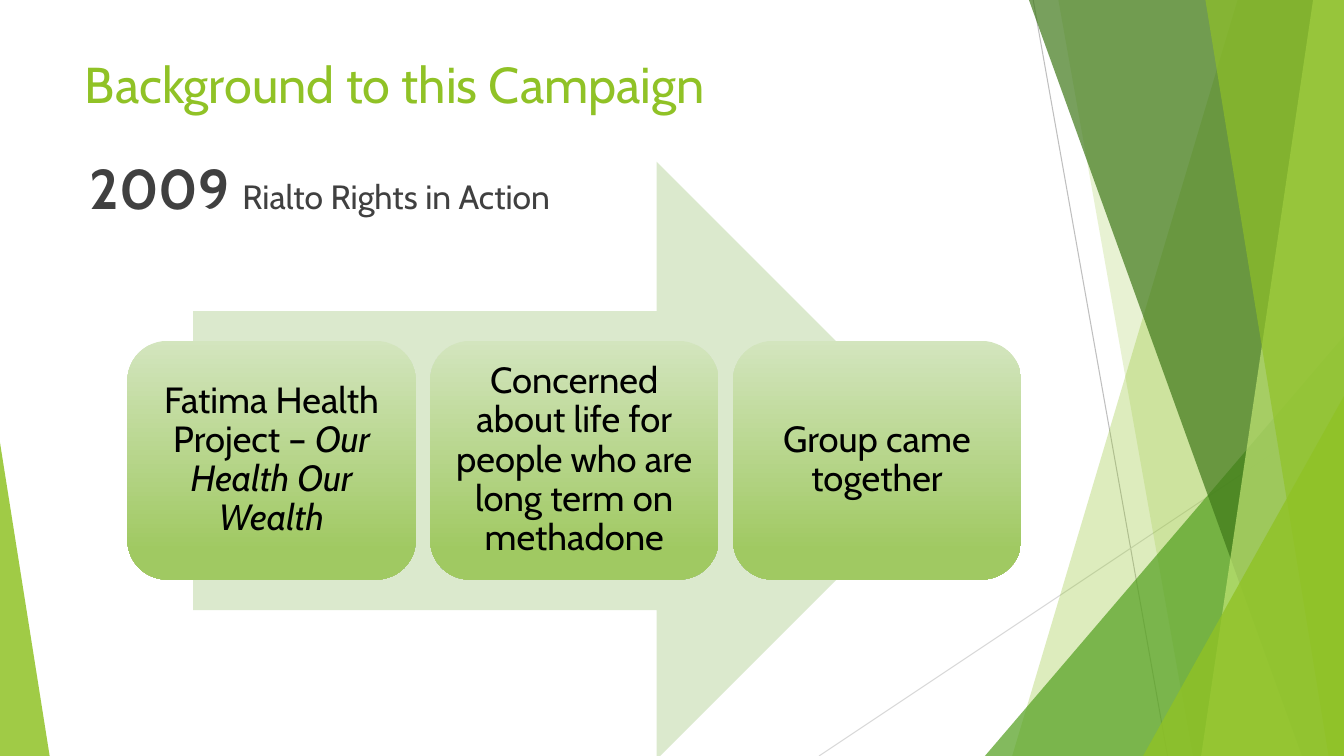
"""Build the campaign background slide."""
import pptx
import pptx.dml.color
import pptx.enum.shapes
import pptx.enum.text
import pptx.oxml
import pptx.oxml.ns
import pptx.util

Pt = pptx.util.Pt
RGBColor = pptx.dml.color.RGBColor
SHAPE = pptx.enum.shapes.MSO_SHAPE
ANCHOR = pptx.enum.text.MSO_ANCHOR
ALIGN = pptx.enum.text.PP_ALIGN
qn = pptx.oxml.ns.qn

WIDE, HIGH = 960, 540
FONT = "Cabin"
LIME = RGBColor(0x90, 0xC2, 0x26)
LEAF = RGBColor(0x54, 0xA0, 0x21)
MOSS = RGBColor(0x3F, 0x78, 0x19)
PALE = RGBColor(0xC0, 0xE4, 0x74)
MIST = RGBColor(0xDB, 0xE9, 0xCD)
CARD_TOP = RGBColor(0xD3, 0xE5, 0xBE)
CARD_END = RGBColor(0xA0, 0xC9, 0x62)
SILVER = RGBColor(0xBF, 0xBF, 0xBF)
LIGHT = RGBColor(0xD9, 0xD9, 0xD9)
DARK = RGBColor(0x40, 0x40, 0x40)
BLACK = RGBColor(0, 0, 0)

CARDS = [
    [("Fatima Health Project – ", False), ("Our Health Our Wealth", True)],
    [("Concerned about life for people who are long term on methadone", False)],
    [("Group came together", False)],
]


def write(frame, text, size=26, color=BLACK, bold=False, italic=False):
    run = frame.paragraphs[0].add_run()
    run.text = text
    font = run.font
    font.name, font.size = FONT, Pt(size)
    font.bold, font.italic = bold, italic
    font.color.rgb = color


def paint(shape, color, alpha=100):
    shape.shadow.inherit = False
    shape.line.fill.background()
    shape.fill.solid()
    shape.fill.fore_color.rgb = color
    if alpha < 100:
        tint = shape.element.spPr.find(".//" + qn("a:srgbClr"))
        node = pptx.oxml.parse_xml(
            f'<a:alpha {pptx.oxml.ns.nsdecls("a")} val="{alpha * 1000}"/>')
        tint.append(node)


def add_line(shapes, start, end, color):
    line = shapes.add_connector(
        pptx.enum.shapes.MSO_CONNECTOR.STRAIGHT, *map(Pt, start + end))
    line.line.color.rgb = color
    line.line.width = Pt(0.75)
    line.element.spPr.append(
        pptx.oxml.parse_xml(f'<a:effectLst {pptx.oxml.ns.nsdecls("a")}/>'))


def add_frond(shapes, top, foot, color, alpha):
    pen = shapes.build_freeform(top, 0, scale=Pt(1))
    pen.add_line_segments([(WIDE, 0), (WIDE, HIGH), (foot, HIGH)])
    paint(pen.convert_to_shape(), color, alpha)


def add_wedge(shapes, left, top, width, tip, color, alpha):
    wedge = shapes.add_shape(
        SHAPE.ISOSCELES_TRIANGLE, Pt(left), Pt(top), Pt(width), Pt(HIGH - top))
    wedge.adjustments[0] = tip
    paint(wedge, color, alpha)


def add_leaves(shapes):
    add_line(shapes, (738, 0), (834, HIGH), SILVER)
    add_line(shapes, (WIDE, 290), (585, HIGH), LIGHT)
    add_frond(shapes, 884, 723, LIME, 30)
    add_frond(shapes, 756, 852, LIME, 20)
    add_wedge(shapes, 703.5, 240, 256.5, 1, LEAF, 72)
    add_frond(shapes, 735, 929.5, MOSS, 70)
    add_frond(shapes, 938, 858, PALE, 70)
    add_frond(shapes, 861, 949, LIME, 65)
    add_wedge(shapes, 816.5, 283, 143.5, 1, LIME, 80)
    add_wedge(shapes, 0, 316, 35.5, 0, LIME, 85)


def add_card(shapes, left, parts):
    card = shapes.add_shape(
        SHAPE.ROUNDED_RECTANGLE, Pt(left), Pt(243.5), Pt(206), Pt(170.5))
    card.shadow.inherit = False
    card.line.fill.background()
    card.fill.gradient()
    card.fill.gradient_angle = 270
    first, last = card.fill.gradient_stops
    first.color.rgb, first.position = CARD_TOP, 0
    last.color.rgb, last.position = CARD_END, 0.88
    frame = card.text_frame
    frame.word_wrap = True
    frame.vertical_anchor = ANCHOR.MIDDLE
    frame.margin_left = frame.margin_right = Pt(8)
    frame.margin_top = frame.margin_bottom = Pt(8)
    frame.paragraphs[0].alignment = ALIGN.CENTER
    frame.paragraphs[0].line_spacing = 0.9
    for text, italic in parts:
        write(frame, text, italic=italic)


def set_title(title, text):
    title.left, title.top = Pt(53.5), Pt(34)
    title.width, title.height = Pt(677), Pt(60)
    frame = title.text_frame
    frame.auto_size = pptx.enum.text.MSO_AUTO_SIZE.NONE
    frame.vertical_anchor = ANCHOR.TOP
    frame.paragraphs[0].alignment = ALIGN.LEFT
    write(frame, text, size=36, color=LIME)


def add_year(shapes, year, text):
    box = shapes.add_textbox(Pt(57), Pt(106), Pt(400), Pt(56))
    box.text_frame.word_wrap = True
    write(box.text_frame, year + " ", size=40, color=DARK, bold=True)
    write(box.text_frame, text, size=24, color=DARK)


def main():
    deck = pptx.Presentation()
    deck.slide_width, deck.slide_height = Pt(WIDE), Pt(HIGH)
    slide = deck.slides.add_slide(deck.slide_layouts[5])
    shapes = slide.shapes
    add_leaves(shapes)
    set_title(shapes.title, "Background to this Campaign")
    add_year(shapes, "2009", "Rialto Rights in Action")
    arrow = shapes.add_shape(
        SHAPE.RIGHT_ARROW, Pt(138), Pt(115.5), Pt(544.5), Pt(427))
    paint(arrow, MIST)
    for i, parts in enumerate(CARDS):
        add_card(shapes, 91 + 216.25 * i, parts)
    deck.save("out.pptx")


if __name__ == "__main__":
    main()
